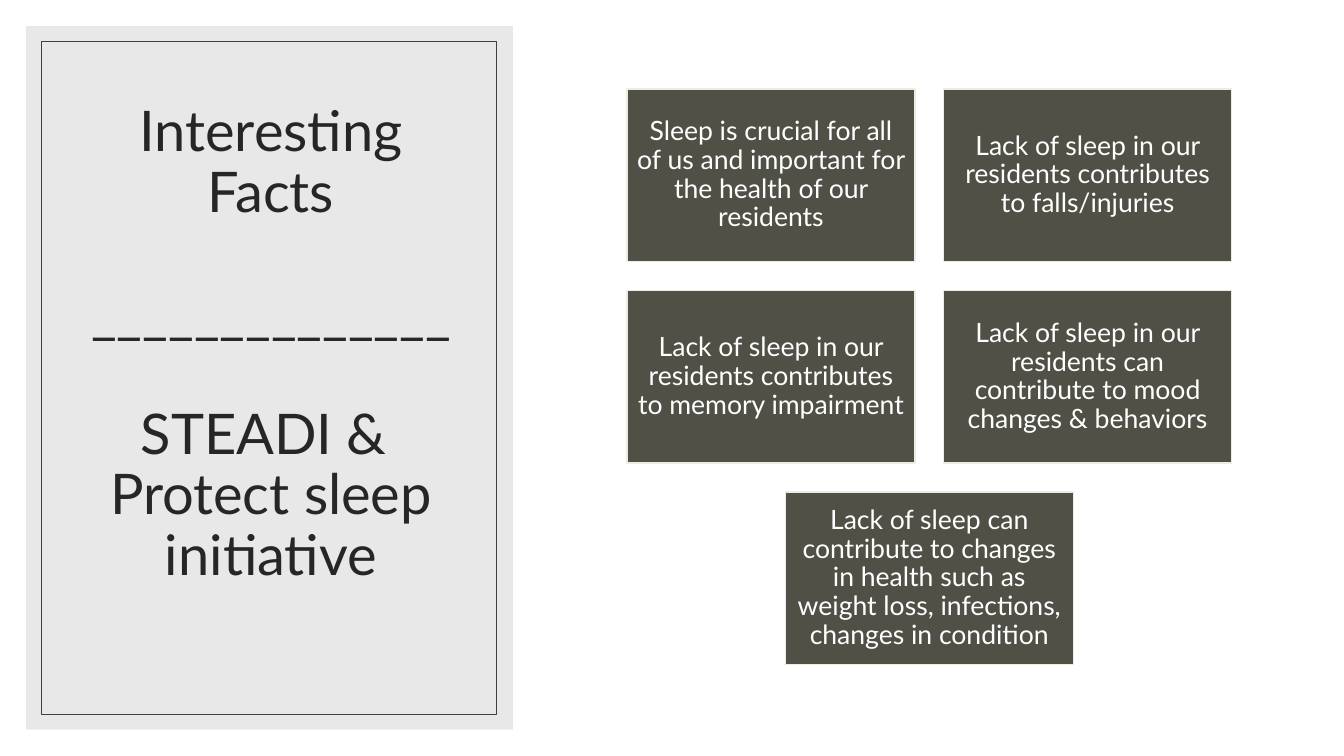
import lxml.etree
import pptx
import pptx.dml.color
import pptx.enum.shapes
import pptx.enum.text
import pptx.oxml.ns
import pptx.util
from pptx.util import Cm

FONT = "Lato"


def color(value):
    return pptx.dml.color.RGBColor.from_string(value)


def add_rectangle(left, top, width, height, fill=None, line=None, line_width=1):
    shape = slide.shapes.add_shape(
        pptx.enum.shapes.MSO_SHAPE.RECTANGLE, Cm(left), Cm(top), Cm(width), Cm(height))
    shape.shadow.inherit = False
    if fill:
        shape.fill.solid()
        shape.fill.fore_color.rgb = color(fill)
    else:
        shape.fill.background()
    if line:
        shape.line.color.rgb = color(line)
        shape.line.width = pptx.util.Pt(line_width)
    else:
        shape.line.fill.background()
    return shape


presentation = pptx.Presentation()
presentation.slide_width = Cm(33.87)
presentation.slide_height = Cm(19.05)
slide = presentation.slides.add_slide(presentation.slide_layouts[6])

panel = add_rectangle(0.66, 0.66, 12.27, 17.73, fill="D9D9D9")
panel_color = panel.fill._xPr.find(".//" + pptx.oxml.ns.qn("a:srgbClr"))
lxml.etree.SubElement(panel_color, pptx.oxml.ns.qn("a:alpha"), val="60000")

title = slide.shapes.add_textbox(Cm(1.6), Cm(1.55), Cm(10.46), Cm(15.85))
title_frame = title.text_frame
title_frame.word_wrap = True
title_frame.margin_top = Cm(1.06)
title_parts = [["Interesting Facts"], ["______________"], ["STEADI & ", "Protect sleep initiative"]]
for index, lines in enumerate(title_parts):
    paragraph = title_frame.add_paragraph() if index else title_frame.paragraphs[0]
    paragraph.alignment = pptx.enum.text.PP_ALIGN.CENTER
    paragraph.line_spacing = 0.9
    paragraph.space_before = pptx.util.Pt(43.2 if index else 0)
    for line_number, text in enumerate(lines):
        if line_number:
            paragraph.add_line_break()
        run = paragraph.add_run()
        run.text = text
        run.font.name = FONT
        run.font.size = pptx.util.Pt(40)
        run.font.color.rgb = color("262626")

add_rectangle(1.04, 1.04, 11.46, 16.97, line="404040", line_width=0.5)

fact_rows = [
    ["Sleep is crucial for all of us and important for the health of our residents",
     "Lack of sleep in our residents contributes to falls/injuries"],
    ["Lack of sleep in our residents contributes to memory impairment",
     "Lack of sleep in our residents can contribute to mood changes & behaviors"],
    ["Lack of sleep can contribute to changes in health such as weight loss, "
     "infections, changes in condition"],
]
fact_width, fact_height = 7.26, 4.35
column_step, row_step = 7.98, 5.08
grid_center, grid_top = 23.42, 2.24

for row, facts in enumerate(fact_rows):
    row_width = (len(facts) - 1) * column_step + fact_width
    for column, text in enumerate(facts):
        left = grid_center - row_width / 2 + column * column_step
        fact = add_rectangle(left, grid_top + row * row_step, fact_width, fact_height,
                             fill="505046", line="EEECE1")
        frame = fact.text_frame
        frame.word_wrap = True
        frame.vertical_anchor = pptx.enum.text.MSO_ANCHOR.MIDDLE
        frame.margin_left = frame.margin_right = Cm(0.2)
        frame.margin_top = frame.margin_bottom = Cm(0.2)
        paragraph = frame.paragraphs[0]
        paragraph.alignment = pptx.enum.text.PP_ALIGN.CENTER
        paragraph.line_spacing = 0.9
        run = paragraph.add_run()
        run.text = text
        run.font.name = FONT
        run.font.size = pptx.util.Pt(19)
        run.font.color.rgb = color("FFFFFF")

presentation.save("out.pptx")
